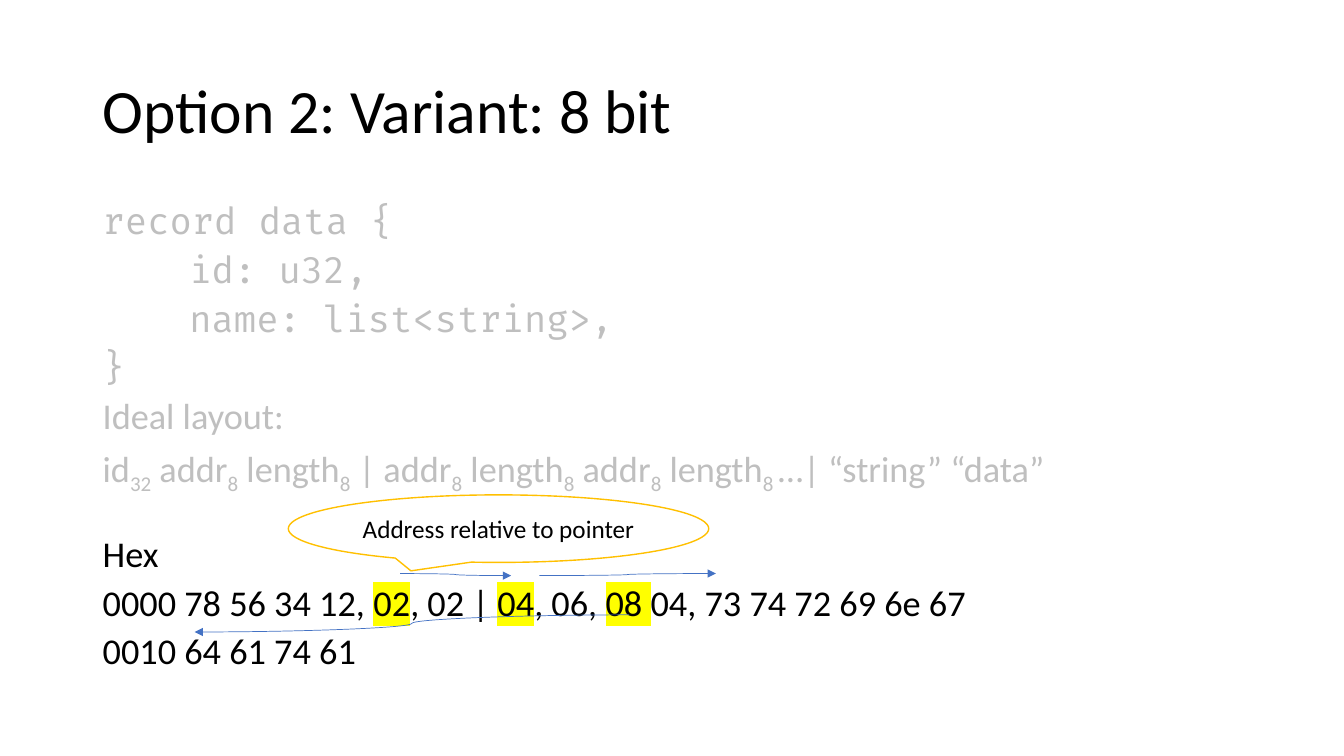
from lxml import etree
from pptx import Presentation
from pptx import util as u
from pptx.dml.color import RGBColor
from pptx.enum import shapes, text
from pptx.oxml import ns

BLACK, GREY, YELLOW = "000000", "BFBFBF", "FFFF00"
BLUE, AMBER, WHITE = "4472C4", "FFC000", "FFFFFF"
SANS, CODE = "Calibri", "Fira Code"
BODY_SIZE = 25.9
CODE_INDENT = u.Inches(0.86)

# Text between underscores is subscript, text between asterisks is highlighted.
# Each line: text, font, colour, left indent, space before in points
BODY_LINES = [
    ("record data {", CODE, GREY, 0, 10),
    ("id: u32,", CODE, GREY, CODE_INDENT, 10),
    ("name: list<string>,", CODE, GREY, CODE_INDENT, 10),
    ("}", CODE, GREY, 0, 10),
    ("Ideal layout:", SANS, GREY, 0, 10),
    ("id_32_ addr_8_ length_8_ | addr_8_ length_8_ addr_8_ length_8 _…| “string” “data”",
     SANS, GREY, 0, 10),
    ("Hex", SANS, BLACK, 0, 35),
    ("0000 78 56 34 12, *02*, 02 | *04*, 06, *08 *04, 73 74 72 69 6e 67", SANS, BLACK, 0, 10),
    ("0010 64 61 74 61", SANS, BLACK, 0, 10),
]

# Each pointer: start x, start y, end x, end y
POINTERS = [
    (3.97, 5.69, 5.07, 5.71),
    (5.35, 5.71, 7.1, 5.69),
    (6.24, 6.1, 1.93, 6.27),
]


def rgb(value):
    return RGBColor.from_string(value)


def style_run(run, font, size, color):
    run.font.name = font
    run.font.size = u.Pt(size)
    run.font.color.rgb = rgb(color)


def highlight(run):
    mark = etree.Element(ns.qn("a:highlight"))
    etree.SubElement(mark, ns.qn("a:srgbClr"), val=YELLOW)
    run.font._element.find(ns.qn("a:solidFill")).addnext(mark)


def add_frame(slide, left, top, width, height):
    box = slide.shapes.add_textbox(*map(u.Inches, (left, top, width, height)))
    box.text_frame.word_wrap = True
    return box.text_frame


def add_title(slide, wording):
    frame = add_frame(slide, 0.92, 0.4, 11.5, 1.45)
    frame.vertical_anchor = text.MSO_ANCHOR.MIDDLE
    frame.text = wording
    frame.paragraphs[0].line_spacing = 0.9
    style_run(frame.paragraphs[0].runs[0], SANS, 44, BLACK)


def fill_line(paragraph, marked, font, color):
    """Add the runs of one line; every second piece is the marked one."""
    sign = "*" if "*" in marked else "_"
    for index, piece in enumerate(marked.split(sign)):
        run = paragraph.add_run()
        run.text = piece
        style_run(run, font, BODY_SIZE, color)
        if index % 2 and sign == "*":
            highlight(run)
        elif index % 2:
            run.font._element.set("baseline", "-25000")


def add_body(slide):
    frame = add_frame(slide, 0.92, 2, 11.5, 4.76)
    for index, (marked, font, color, indent, space) in enumerate(BODY_LINES):
        paragraph = frame.add_paragraph() if index else frame.paragraphs[0]
        paragraph.line_spacing = 0.8
        paragraph.space_before = u.Pt(space)
        paragraph._p.get_or_add_pPr().set("marL", str(indent))
        fill_line(paragraph, marked, font, color)


def add_pointer(slide, *ends):
    pointer = slide.shapes.add_connector(shapes.MSO_CONNECTOR.CURVE, *map(u.Inches, ends))
    pointer.line.color.rgb = rgb(BLUE)
    pointer.line.width = u.Pt(0.5)
    etree.SubElement(pointer.line._get_or_add_ln(), ns.qn("a:tailEnd"), type="triangle")
    etree.SubElement(pointer._element.spPr, ns.qn("a:effectLst"))


def add_callout(slide, wording):
    callout = slide.shapes.add_shape(
        shapes.MSO_SHAPE.OVAL_CALLOUT, *map(u.Inches, (2.86, 4.91, 4.17, 0.67)))
    callout.shadow.inherit = False
    callout.fill.solid()
    callout.fill.fore_color.rgb = rgb(WHITE)
    callout.line.color.rgb = rgb(AMBER)
    callout.line.width = u.Pt(1)
    frame = callout.text_frame
    frame.text = wording
    frame.vertical_anchor = text.MSO_ANCHOR.MIDDLE
    frame.paragraphs[0].alignment = text.PP_ALIGN.CENTER
    style_run(frame.paragraphs[0].runs[0], SANS, 18, BLACK)


def main():
    deck = Presentation()
    deck.slide_width, deck.slide_height = u.Inches(13.33), u.Inches(7.5)
    slide = deck.slides.add_slide(deck.slide_layouts[6])
    add_title(slide, "Option 2: Variant: 8 bit")
    add_body(slide)
    for ends in POINTERS:
        add_pointer(slide, *ends)
    add_callout(slide, "Address relative to pointer")
    deck.save("out.pptx")


if __name__ == "__main__":
    main()
